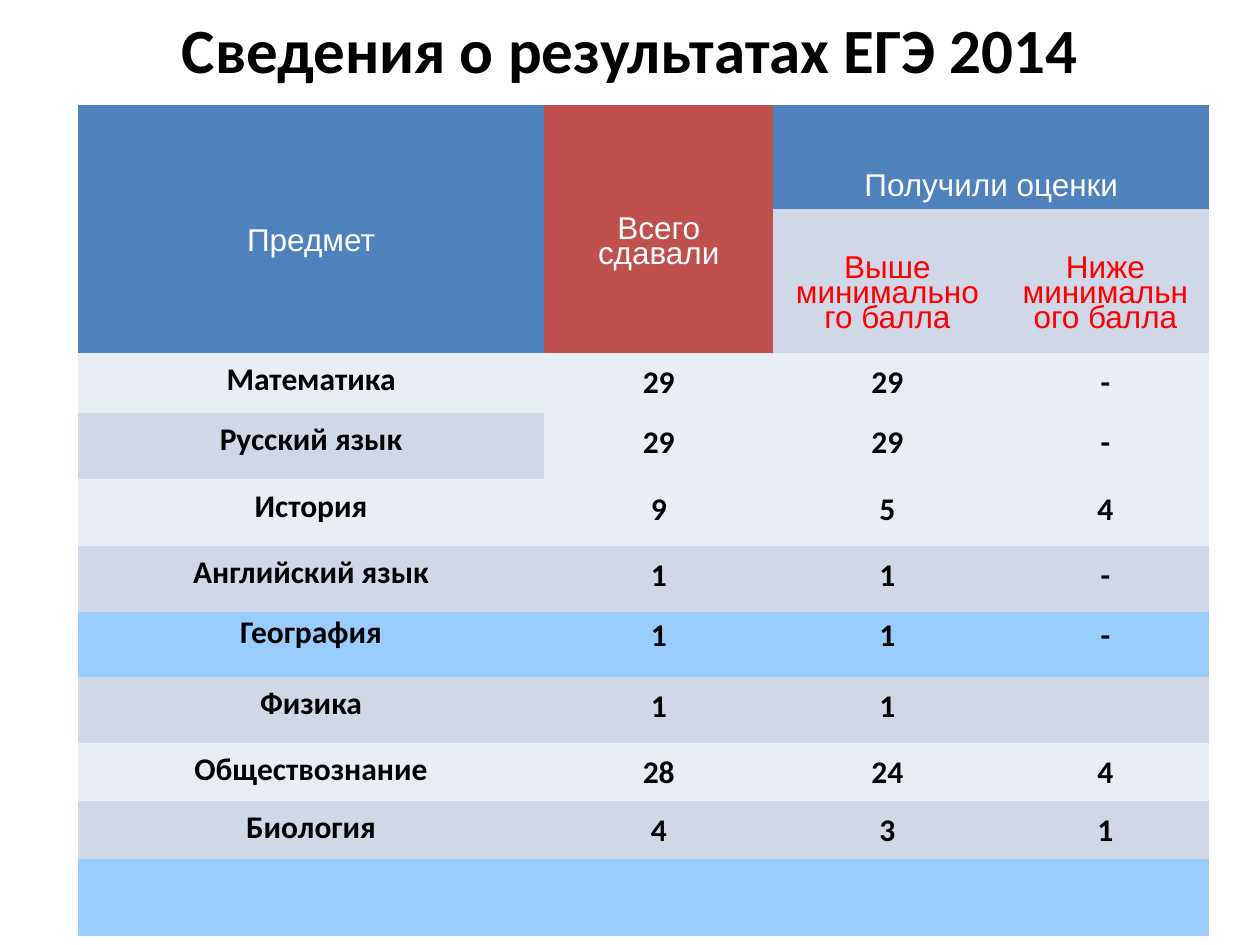
from pptx import Presentation
from pptx.dml.color import RGBColor
from pptx.enum.text import MSO_ANCHOR, PP_ALIGN
from pptx.oxml.ns import qn
from pptx.util import Cm, Pt

BLUE, RED, SKY = "4F81BD", "C0504D", "99CCFF"
LIGHT, DARK = "E9EDF4", "D0D8E8"
PLAIN_STYLE = "{2D5ABB26-0587-4C30-8999-92F81FD0307C}"

COLUMN_WIDTHS = [9.4, 4.62, 4.6, 4.19]
ROW_HEIGHTS = [2.1, 2.9, 1.21, 1.34, 1.34, 1.33, 1.31, 1.33, 1.17, 1.17, 1.55]

# Row, column, label, text colour, fill, top margin
HEADINGS = [
    (0, 0, "Предмет", "FFFFFF", BLUE, 0.76),
    (0, 1, "Всего сдавали", "FFFFFF", RED, 0.76),
    (0, 2, "Получили оценки", "FFFFFF", BLUE, 1.42),
    (1, 2, "Выше минимально го балла", "FF0000", DARK, 0.76),
    (1, 3, "Ниже минимального балла", "FF0000", DARK, 0.76),
]

# Subject, total, above and below the minimum; fill of subject, fill of results
RESULTS = [
    (("Математика", "29", "29", "-"), LIGHT, LIGHT),
    (("Русский язык", "29", "29", "-"), DARK, LIGHT),
    (("История", "9", "5", "4"), LIGHT, LIGHT),
    (("Английский язык", "1", "1", "-"), DARK, DARK),
    (("География", "1", "1", "-"), SKY, SKY),
    (("Физика", "1", "1", ""), DARK, DARK),
    (("Обществознание", "28", "24", "4"), LIGHT, LIGHT),
    (("Биология", "4", "3", "1"), DARK, DARK),
    (("", "", "", ""), SKY, SKY),
]


def colour(hex_code):
    return RGBColor.from_string(hex_code)


def format_text(paragraph, size, font_name, text_colour, bold):
    paragraph.alignment = PP_ALIGN.CENTER
    for run in paragraph.runs:
        run.font.size = Pt(size)
        run.font.name = font_name
        run.font.bold = bold
        run.font.color.rgb = colour(text_colour)


def fill_cell(cell, text, fill, font_name, text_colour, bold, spacing, margins):
    cell.fill.solid()
    cell.fill.fore_color.rgb = colour(fill)
    side, top, bottom = margins
    cell.margin_left = cell.margin_right = Cm(side)
    cell.margin_top, cell.margin_bottom = Cm(top), Cm(bottom)
    if text:
        cell.text_frame.text = text
        paragraph = cell.text_frame.paragraphs[0]
        paragraph.line_spacing = spacing
        format_text(paragraph, 18, font_name, text_colour, bold)


def add_title(slide, left, top, width, height):
    title = slide.shapes.title
    title.left, title.top = Cm(left), Cm(top)
    title.width, title.height = Cm(width), Cm(height)
    title.text_frame.text = "Сведения о результатах ЕГЭ 2014"
    title.text_frame.vertical_anchor = MSO_ANCHOR.MIDDLE
    format_text(title.text_frame.paragraphs[0], 36, "Calibri", "000000", True)


def add_results_table(slide, left, top, width, height):
    results = slide.shapes.add_table(
        len(ROW_HEIGHTS), len(COLUMN_WIDTHS),
        Cm(left), Cm(top), Cm(width), Cm(height)).table
    results.first_row = results.horz_banding = False
    results._tbl.tblPr.find(qn("a:tableStyleId")).text = PLAIN_STYLE

    # Grid, scaled to the given box
    for column, share in zip(results.columns, COLUMN_WIDTHS):
        column.width = Cm(width * share / sum(COLUMN_WIDTHS))
    for row, share in zip(results.rows, ROW_HEIGHTS):
        row.height = Cm(height * share / sum(ROW_HEIGHTS))

    # Two-level heading
    for column in (0, 1):
        results.cell(0, column).merge(results.cell(1, column))
    results.cell(0, 2).merge(results.cell(0, 3))
    for row, column, label, text_colour, fill, margin_top in HEADINGS:
        heading = results.cell(row, column)
        heading.vertical_anchor = MSO_ANCHOR.MIDDLE
        fill_cell(heading, label, fill, "Arial", text_colour, False, 0.71,
                  (0.25, margin_top, 0.13))

    # Subjects; the sky-blue rows have no margins, numbers sit slightly lower
    for row, (values, subject_fill, result_fill) in enumerate(RESULTS, start=2):
        side, edge = (0, 0) if subject_fill == SKY else (0.25, 0.13)
        for column, value in enumerate(values):
            fill = result_fill if column else subject_fill
            margin_top = edge + (0.06 if column else 0)
            fill_cell(results.cell(row, column), value, fill, "Calibri",
                      "000000", True, 1.04, (side, margin_top, edge))


def main():
    presentation = Presentation()
    presentation.slide_width, presentation.slide_height = Cm(25.4), Cm(19.05)
    slide = presentation.slides.add_slide(presentation.slide_layouts[5])
    add_title(slide, 1.27, -0.23, 22.86, 2.41)
    add_results_table(slide, 1.57, 2.11, 22.81, 16.75)
    presentation.save("out.pptx")


if __name__ == "__main__":
    main()
